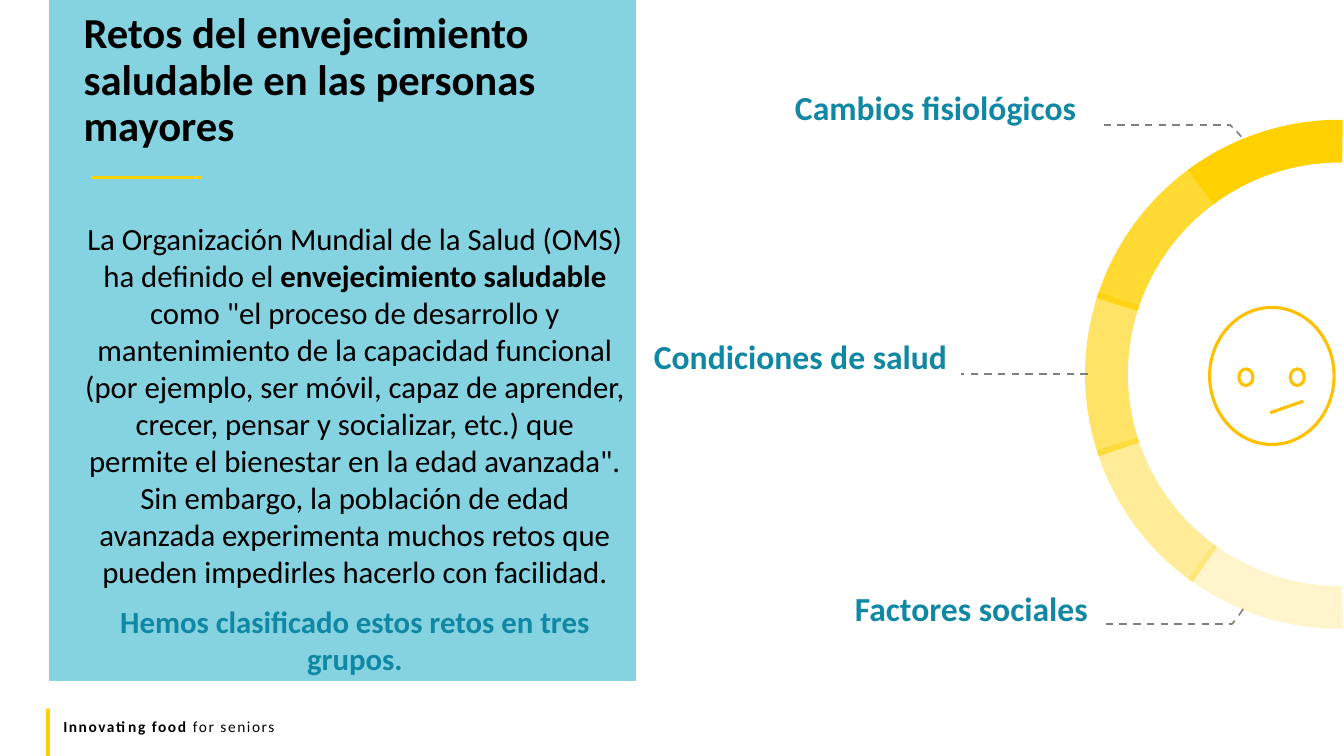
from math import cos, radians, sin

from lxml.etree import SubElement
from pptx import Presentation
from pptx.dml.color import RGBColor
from pptx.enum.shapes import MSO_CONNECTOR as Connector, MSO_SHAPE as Shape
from pptx.enum.text import MSO_ANCHOR as Anchor, PP_ALIGN as Align
from pptx.oxml.ns import qn
from pptx.util import Inches, Pt

# Grid: ten cells to the inch, so the slide is 133.33 columns by 75 rows
CELL = Inches(0.1)
YELLOW, RING, AMBER = "FFD100", "FED100", "FFC000"
SKY, TEAL, GREY, BLACK = "85D2E1", "1188A3", "808080", "000000"
DASH, DASH_STEP = 0.73, 1.36


def cells(*counts):
    return [round(count * CELL) for count in counts]


def color(target, hex_code, opacity=100):
    target.solid()
    target.fore_color.rgb = RGBColor.from_string(hex_code)
    if opacity < 100:
        tint = target._xPr.find(qn("a:solidFill"))[0]
        SubElement(tint, qn("a:alpha")).set("val", str(opacity * 1000))


def style(shape, fill=None, line=None, width=0.75, opacity=100):
    shape.shadow.inherit = False
    if fill:
        color(shape.fill, fill, opacity)
    else:
        shape.fill.background()
    if line:
        color(shape.line.fill, line)
        shape.line.width = Pt(width)
    else:
        shape.line.fill.background()


def add_block(slide, box, kind=Shape.RECTANGLE, **look):
    block = slide.shapes.add_shape(kind, *cells(*box))
    style(block, **look)
    return block


def add_stroke(slide, start, end, hex_code, width):
    stroke = slide.shapes.add_connector(Connector.STRAIGHT, *cells(*start, *end))
    color(stroke.line.fill, hex_code)
    stroke.line.width = Pt(width)
    SubElement(stroke._element.spPr, qn("a:effectLst"))


def add_outline(slide, points, close, **look):
    first, *rest = [cells(*point) for point in points]
    builder = slide.shapes.build_freeform(*first)
    builder.add_line_segments(rest, close=close)
    style(builder.convert_to_shape(), **look)


def add_text(frame, *runs, new=False, size=22, hex_code=BLACK, align=Align.LEFT,
             spacing=0.9, before=0, indent=0, tracking=0):
    """Write one paragraph; each run is a (text, bold) pair."""
    frame.word_wrap = True
    paragraph = frame.add_paragraph() if new else frame.paragraphs[0]
    paragraph.alignment = align
    paragraph.line_spacing = spacing
    paragraph.space_before = Pt(before)
    paragraph._p.get_or_add_pPr().set("marL", str(cells(indent)[0]))
    for text, bold in runs:
        run = paragraph.add_run()
        run.text = text
        run.font.name, run.font.size, run.font.bold = "Calibri", Pt(size), bold
        color(run.font.fill, hex_code)
        if tracking:
            run.font._element.set("spc", str(tracking))


def draw_ring(slide, box):
    left, top, diameter = box
    outer = diameter / 2
    inner = outer - 4.25
    center_x, center_y = left + outer, top + outer

    def arc(radius, start, end, steps=24):
        # Angles run clockwise from the left-most point of the ring
        turns = [radians(start + (end - start) * i / steps) for i in range(steps + 1)]
        return [(center_x - radius * cos(t), center_y - radius * sin(t)) for t in turns]

    # Neighbouring segments overlap slightly
    segments = [(-18.8, 18.8, 60), (53.4, 90.7, 100), (17.4, 54.7, 80),
                (-90.7, -53.4, 20), (-54.7, -17.4, 40)]
    for start, end, opacity in segments:
        points = arc(outer, start, end) + arc(inner, end, start)
        add_outline(slide, points, True, fill=RING if opacity < 100 else YELLOW,
                    opacity=opacity)


def draw_leader(slide, start, end_x, bend=0):
    """Dashes from start to end_x; bend is the slope of the turn at the end."""
    x, y = start
    way = 1 if end_x > x else -1
    while (end_x - x) * way > 0.1:
        length = min(DASH, (end_x - x) * way)
        add_stroke(slide, (x, y), (x + way * length, y), GREY, 1.13)
        x += way * DASH_STEP
    if bend:
        corner = [(x, y), (x + 0.3, y), (x + 0.55, y + 0.25 * bend)]
        add_outline(slide, corner, False, fill=YELLOW, line=GREY, width=1.13)
        add_stroke(slide, (x + 0.95, y + 0.65 * bend), (x + 1.4, y + 1.15 * bend),
                   GREY, 1.13)


def draw_challenge(slide, box, name, leader_x, end_x, drop, bend):
    left, top, width, height = box
    label = slide.shapes.add_textbox(*cells(*box))
    add_text(label.text_frame, (name, True), size=24, hex_code=TEAL, align=Align.RIGHT)
    right = left + width
    draw_leader(slide, (right + leader_x, top + drop), right + end_x, bend)


def draw_face(slide, box):
    left, top, width, height = box
    pen = {"line": AMBER, "width": 2.25}
    add_block(slide, box, Shape.OVAL, **pen)
    for eye in (8, 2.9):
        add_block(slide, (left + eye, top + 6.1, 1.4, 1.65), Shape.OVAL, **pen)
    add_stroke(slide, (left + 6, top + 10.45), (left + 9.3, top + 9.3), AMBER, 2.25)


def draw_panel(slide, box):
    left, top, width, height = box
    title_height = 16.1
    # Title
    title = add_block(slide, (left, top, width, title_height), fill=SKY, line=SKY)
    title.text_frame.vertical_anchor = Anchor.MIDDLE
    add_text(title.text_frame,
             ("Retos del envejecimiento saludable en las personas mayores", True),
             size=30.5, indent=2.4)
    # Definition and closing sentence
    body = add_block(slide, (left, top + title_height, width, height - title_height),
                     fill=SKY, line=SKY)
    frame = body.text_frame
    frame.vertical_anchor = Anchor.TOP
    frame.margin_top = cells(5.7)[0]
    centered = {"align": Align.CENTER, "spacing": 1, "indent": 2.5}
    add_text(frame,
             ("La Organización Mundial de la Salud (OMS) ha definido el ", False),
             ("envejecimiento saludable ", True),
             ("como \"el proceso de desarrollo y mantenimiento de la capacidad "
              "funcional (por ejemplo, ser móvil, capaz de aprender, crecer, pensar y "
              "socializar, etc.) que permite el bienestar en la edad avanzada\". Sin "
              "embargo, la población de edad avanzada experimenta muchos retos que "
              "pueden impedirles hacerlo con facilidad.", False), **centered)
    add_text(frame, ("Hemos clasificado estos retos en tres grupos.", True),
             new=True, hex_code=TEAL, before=10, **centered)
    # Rule under the title
    rule = top + title_height + 1.5
    add_stroke(slide, (left + 4.1, rule), (left + 15, rule), RING, 2.25)


def draw_footer(slide, box):
    left, top, width, height = box
    motto = slide.shapes.add_textbox(*cells(left + 0.75, top + 0.35, width, 2.9))
    add_text(motto.text_frame, ("Innovating food ", True), ("for seniors", False),
             size=11, spacing=1, tracking=110)
    add_block(slide, (left, top, 0.4, height), fill=YELLOW)


def main():
    deck = Presentation()
    deck.slide_width, deck.slide_height = Inches(13.333), Inches(7.5)
    slide = deck.slides.add_slide(deck.slide_layouts[6])

    draw_ring(slide, (107.65, 11.88, 50.5))
    draw_footer(slide, (4.55, 70.3, 120, 4.7))
    # Label box, name, then leader start, end, drop and bend
    challenges = [
        ((58.85, 33.25, 36.1, 4.8), "Condiciones de salud", 12.95, 0.35, 3.85, 0),
        ((71.65, 8.6, 36.1, 4.8), "Cambios fisiológicos", 1.75, 13.4, 3.8, 1),
        ((70.2, 58.25, 38.7, 4.8), "Factores sociales", 0.8, 12.4, 3.65, -1.3),
    ]
    for challenge in challenges:
        draw_challenge(slide, *challenge)
    draw_panel(slide, (4.9, 0, 58.1, 67.5))
    draw_face(slide, (120, 30.5, 12.35, 13.6))

    deck.save("out.pptx")


if __name__ == "__main__":
    main()
